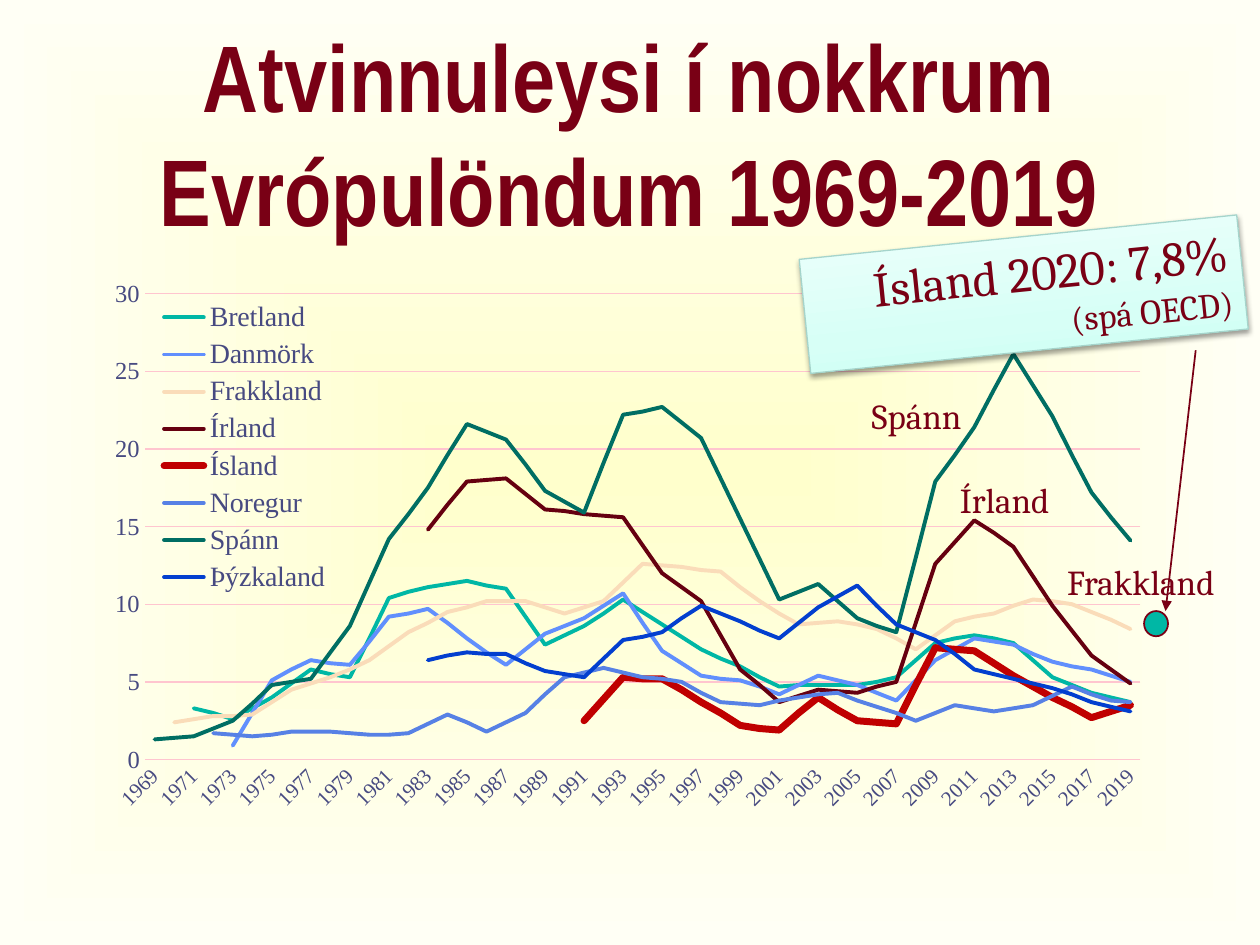
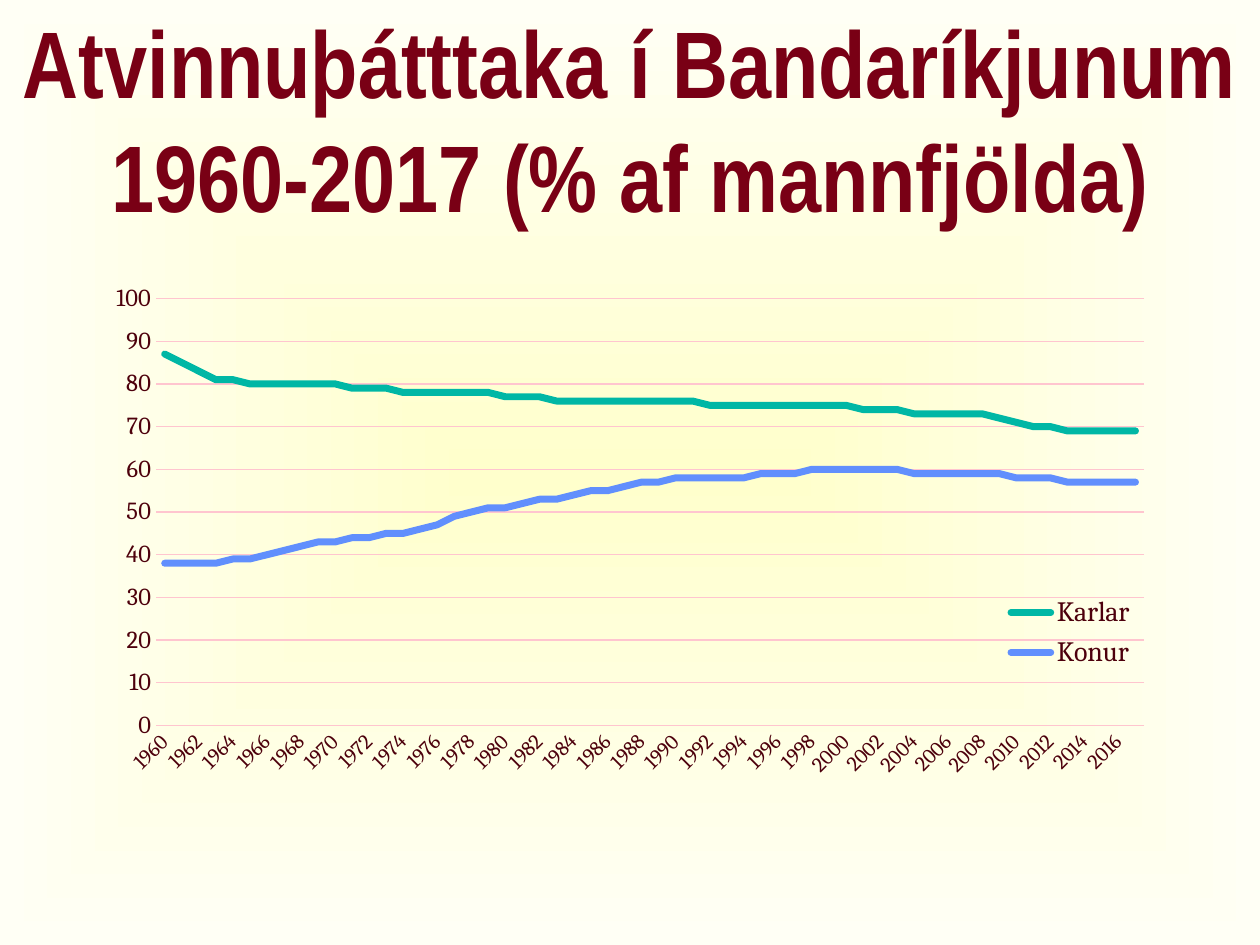
import dataclasses
import lxml.etree
import pptx
import pptx.chart.data
import pptx.dml.color
import pptx.enum.chart
import pptx.enum.dml
import pptx.enum.shapes
import pptx.enum.text
import pptx.oxml.ns
import pptx.util

Inches = pptx.util.Inches
Pt = pptx.util.Pt
qn = pptx.oxml.ns.qn


@dataclasses.dataclass(frozen=True)
class Theme:
    wine: str = "790015"
    teal: str = "00B7A5"
    blue: str = "618FFD"
    pink: str = "FFC5CF"
    rim: str = "A5D4CB"
    page: tuple = ((0, "FFFFCC"), (100, "FFFFF5"))
    mint: tuple = ((0, "C7FFF3"), (35, "D7FFF6"), (100, "EFFFFC"))
    head: str = "Arial Narrow"
    body: str = "Cambria"
    serif: str = "Times New Roman"
    title: int = 54
    big: int = 28
    mid: int = 20
    key: int = 16
    tick: int = 14
    year: int = 12
    base: int = 10
    thin: float = 2.25
    thick: float = 4


@dataclasses.dataclass(frozen=True)
class Look:
    """What differs between the two charts; lengths in inches, gap in years."""
    font: str
    ink: str
    top: int
    step: int
    gap: int
    digits: int
    plot: tuple
    legend: tuple


T = Theme()
CHART = (0.75, 2.17, 8.5, 4.5)
RATES = Look(T.serif, "474A81", 30, 5, 2, 1, (0.4, 0.16, 7.9, 3.7), (0.44, 0.18, 1.5, 2.4))
SHARES = Look(T.body, "4D000C", 100, 10, 3, 0, (0.49, 0.2, 7.84, 3.39), (7.17, 2.5, 1.15, 0.7))

# Series: name, colour, line width, first year, values one gap apart up to the last year
JOBLESS = [
    ("Bretland", T.teal, T.thin, 1971,
     [3.3, 2.6, 4, 5.8, 5.3, 10.4, 11.1, 11.5, 11, 7.4, 8.6, 10.3, 8.7, 7.1, 6, 4.7, 4.8, 4.8,
      5.3, 7.5, 8, 7.5, 5.3, 4.3, 3.7]),
    ("Danmörk", T.blue, T.thin, 1973,
     [0.9, 5.1, 6.4, 6.1, 9.2, 9.7, 7.8, 6.1, 8.1, 9.1, 10.7, 7, 5.4, 5.1, 4.2, 5.4, 4.8, 3.8,
      6.4, 7.8, 7.4, 6.3, 5.8, 5]),
    ("Frakkland", "FADCB9", T.thin, 1970,
     [2.4, 2.8, 2.9, 4.5, 5.3, 6.4, 8.2, 9.5, 10.2, 10.2, 9.4, 10.2, 12.6, 12.4, 12.1, 10.2, 8.7,
      8.9, 8.4, 7.1, 8.9, 9.4, 10.3, 10, 9, 8.4]),
    ("Írland", "660010", T.thin, 1983,
     [14.8, 17.9, 18.1, 16.1, 15.8, 15.6, 12, 10.2, 5.8, 3.7, 4.5, 4.3, 5, 12.6, 15.4, 13.7, 9.9,
      6.7, 4.9]),
    ("Ísland", "C00000", T.thick, 1991,
     [2.5, 5.3, 5.2, 3.7, 2.2, 1.9, 4, 2.5, 2.3, 7.2, 7, 5.4, 4, 2.7, 3.5]),
    ("Noregur", "5781E5", T.thin, 1972,
     [1.7, 1.5, 1.8, 1.8, 1.6, 1.7, 2.9, 1.8, 3, 5.3, 5.9, 5.3, 5, 3.7, 3.5, 4, 4.3, 3.4, 2.5,
      3.5, 3.1, 3.5, 4.7, 3.8, 3.7]),
    ("Spánn", "006E63", T.thin, 1969,
     [1.3, 1.5, 2.5, 4.8, 5.2, 8.6, 14.2, 17.5, 21.6, 20.6, 17.3, 15.9, 22.2, 22.7, 20.7, 15.5,
      10.3, 11.3, 9.1, 8.2, 17.9, 21.4, 26.1, 22.1, 17.2, 14.1]),
    ("Þýzkaland", "033FCF", T.thin, 1983,
     [6.4, 6.9, 6.8, 5.7, 5.3, 7.7, 8.2, 9.9, 8.9, 7.8, 9.8, 11.2, 8.7, 7.7, 5.8, 5.2, 4.6, 3.7,
      3.1]),
]
WORK = [
    ("Karlar", T.teal, T.thick, 1960,
     [87, 81, 80, 80, 79, 78, 78, 77, 76, 76, 76, 75, 75, 75, 74, 73, 73, 70, 69, 69]),
    ("Konur", T.blue, T.thick, 1960,
     [38, 38, 40, 43, 44, 46, 50, 52, 54, 56, 58, 58, 59, 60, 60, 59, 59, 58, 57, 57]),
]


def rgb(code):
    return pptx.dml.color.RGBColor.from_string(code)


def node(owner, tag, **attrs):
    return lxml.etree.SubElement(owner, qn(tag), attrs)


def blend(item, fill, stops):
    """Fill an item with a gradient and return its node for the direction."""
    fill.gradient()
    grad = item.element.find(".//" + qn("a:gradFill"))
    for part in list(grad):
        grad.remove(part)
    row = node(grad, "a:gsLst")
    for pos, code in stops:
        stop = node(row, "a:gs", pos=str(pos * 1000))
        node(stop, "a:srgbClr", val=code)
    return grad


def style(font, name, size, code, bold=False):
    font.name, font.size, font.bold = name, Pt(size), bold
    font.color.rgb = rgb(code)


def stroke(line, code, width):
    line.color.rgb = rgb(code)
    line.width = Pt(width)


def write(para, text, size, name=T.body, bold=False):
    run = para.add_run()
    run.text = text
    style(run.font, name, size, T.wine, bold)


def title(slide, box, text):
    frame = slide.shapes.add_textbox(*map(Inches, box)).text_frame
    frame.word_wrap = True
    frame.vertical_anchor = pptx.enum.text.MSO_ANCHOR.MIDDLE
    para = frame.paragraphs[0]
    para.alignment = pptx.enum.text.PP_ALIGN.CENTER
    write(para, text, T.title, T.head, True)


def yearly(look, first, start, last, vals):
    """Fill the years between the given values along straight lines."""
    knots = list(zip([*range(start, last, look.gap), last], vals))
    full = [None] * (start - first) + [vals[0]]
    for (left, low), (right, high) in zip(knots, knots[1:]):
        span = right - left
        full += [round(low + (high - low) * i / span, look.digits) for i in range(1, span + 1)]
    return full


def place(owner, index, box, area, inner=False):
    """Give a chart part a fixed place, in shares of the chart's size."""
    for old in owner.findall(qn("c:layout")):
        owner.remove(old)
    layout = owner.makeelement(qn("c:layout"))
    owner.insert(index, layout)
    manual = node(layout, "c:manualLayout")
    if inner:
        node(manual, "c:layoutTarget", val="inner")
    for side in "xy":
        node(manual, f"c:{side}Mode", val="edge")
    for side, part, whole in zip("xywh", box, area[2:] * 2):
        node(manual, f"c:{side}", val=f"{part / whole:.4f}")


def graph(slide, box, look, first, last, rows):
    data = pptx.chart.data.CategoryChartData(number_format="General")
    data.categories = [str(year) for year in range(first, last + 1)]
    for name, _, _, start, vals in rows:
        data.add_series(name, yearly(look, first, start, last, vals))
    kind = pptx.enum.chart.XL_CHART_TYPE.LINE
    chart = slide.shapes.add_chart(kind, *map(Inches, box), data).chart
    style(chart.font, T.serif, T.base, T.wine)
    chart.has_title = False
    root = chart._element

    # Lines
    chart.plots[0].vary_by_categories = False
    for line, (_, code, width, _, _) in zip(chart.plots[0].series, rows):
        line.smooth = False
        stroke(line.format.line, code, width)
    for ln in root.iterfind(".//" + "/".join(map(qn, ("c:ser", "c:spPr", "a:ln")))):
        ln.set("cap", "rnd")

    # Axes
    years, scale = chart.category_axis, chart.value_axis
    for axis, size in ((years, T.year), (scale, T.tick)):
        axis.major_tick_mark = axis.minor_tick_mark = pptx.enum.chart.XL_TICK_MARK.NONE
        style(axis.tick_labels.font, look.font, size, look.ink)
    stroke(years.format.line, T.pink, 0.75)
    cat = root.find(".//" + qn("c:catAx"))
    cat.find(".//" + qn("a:bodyPr")).set("rot", "-2700000")
    skip = cat.makeelement(qn("c:tickLblSkip"), {"val": "2"})
    cat.find(qn("c:noMultiLvlLbl")).addprevious(skip)
    scale.minimum_scale, scale.maximum_scale, scale.major_unit = 0, look.top, look.step
    scale.format.line.fill.background()
    stroke(scale.major_gridlines.format.line, T.pink, 0.75)
    scale.tick_labels.number_format = "0"
    scale.tick_labels.number_format_is_linked = False

    # Legend and plot area
    chart.has_legend = True
    key = chart.legend
    key.position = pptx.enum.chart.XL_LEGEND_POSITION.BOTTOM
    key.include_in_layout = False
    style(key.font, look.font, T.key, look.ink)
    place(root.find(".//" + qn("c:legend")), 1, look.legend, box)
    area = root.find(".//" + qn("c:plotArea"))
    place(area, 0, look.plot, box, inner=True)

    # Clear backgrounds
    node(node(area, "c:spPr"), "a:noFill")
    clear = root.makeelement(qn("c:spPr"))
    node(clear, "a:noFill")
    root.find(qn("c:chart")).addnext(clear)


def marker(slide, box):
    """Forecast dot and the arrow that points to it."""
    x, y = box[:2]
    dot = slide.shapes.add_shape(
        pptx.enum.shapes.MSO_SHAPE.OVAL,
        *map(Inches, (x + 8.33, y + 2.68, 0.19, 0.2)))
    dot.shadow.inherit = False
    dot.fill.solid()
    dot.fill.fore_color.rgb = rgb(T.teal)
    stroke(dot.line, T.wine, 1)
    arrow = slide.shapes.add_connector(
        pptx.enum.shapes.MSO_CONNECTOR.STRAIGHT,
        *map(Inches, (x + 8.74, y + 0.61, x + 8.5, y + 2.68)))
    stroke(arrow.line, T.wine, 1)
    node(arrow.element.find(".//" + qn("a:ln")), "a:tailEnd", type="triangle")
    node(arrow.element.spPr, "a:effectLst")


def callout(slide, box):
    """Tilted note with the forecast."""
    x, y = box[:2]
    note = slide.shapes.add_shape(
        pptx.enum.shapes.MSO_SHAPE.RECTANGLE,
        *map(Inches, (x + 5.63, y - 0.29, 3.49, 0.91)))
    note.rotation = 354.2
    node(blend(note, note.fill, T.mint), "a:lin", ang=str(270 * 60000), scaled="1")
    stroke(note.line, T.rim, 0.75)
    note.shadow.inherit = False
    shade = node(note.element.find(".//" + qn("a:effectLst")), "a:outerShdw",
                 blurRad=str(Pt(3.1)), dist=str(Pt(1.6)), dir=str(90 * 60000),
                 rotWithShape="0")
    node(node(shade, "a:srgbClr", val="000000"), "a:alpha", val="38000")
    frame = note.text_frame
    frame.word_wrap = True
    frame.vertical_anchor = pptx.enum.text.MSO_ANCHOR.TOP
    frame.auto_size = pptx.enum.text.MSO_AUTO_SIZE.SHAPE_TO_FIT_TEXT
    lines = (frame.paragraphs[0], "Ísland 2020: 7,8%", T.big), (frame.add_paragraph(), "(spá OECD)", T.mid)
    for para, text, size in lines:
        para.alignment = pptx.enum.text.PP_ALIGN.RIGHT
        write(para, text, size)


def labels(slide, box):
    """Country names beside their lines."""
    for text, x, y, wide in (("Spánn", 6.07, 0.91, 0.97), ("Írland", 6.77, 1.58, 0.93),
                             ("Frakkland", 7.62, 2.23, 1.41)):
        spot = (box[0] + x, box[1] + y, wide, 0.44)
        frame = slide.shapes.add_textbox(*map(Inches, spot)).text_frame
        frame.word_wrap = False
        frame.auto_size = pptx.enum.text.MSO_AUTO_SIZE.SHAPE_TO_FIT_TEXT
        write(frame.paragraphs[0], text, T.mid)


def main():
    deck = pptx.Presentation()
    deck.slide_width, deck.slide_height = Inches(10), Inches(7.5)
    blank = deck.slide_layouts[6]

    # Shared background
    base = deck.slide_master
    glow = node(blend(base, base.background.fill, T.page), "a:path", path="shape")
    node(glow, "a:fillToRect", l="50000", t="50000", r="50000", b="50000")

    # Unemployment in Europe
    slide = deck.slides.add_slide(blank)
    title(slide, (0.58, 0.42, 8.83, 1.25), "Atvinnuleysi í nokkrum Evrópulöndum 1969-2019")
    marker(slide, CHART)
    graph(slide, CHART, RATES, 1969, 2019, JOBLESS)
    callout(slide, CHART)
    labels(slide, CHART)

    # Participation by sex
    slide = deck.slides.add_slide(blank)
    title(slide, (0, 0.31, 10, 1.25), "Atvinnuþátttaka í Bandaríkjunum 1960-2017 (% af mannfjölda)")
    graph(slide, CHART, SHARES, 1960, 2017, WORK)

    deck.save("out.pptx")


if __name__ == "__main__":
    main()
